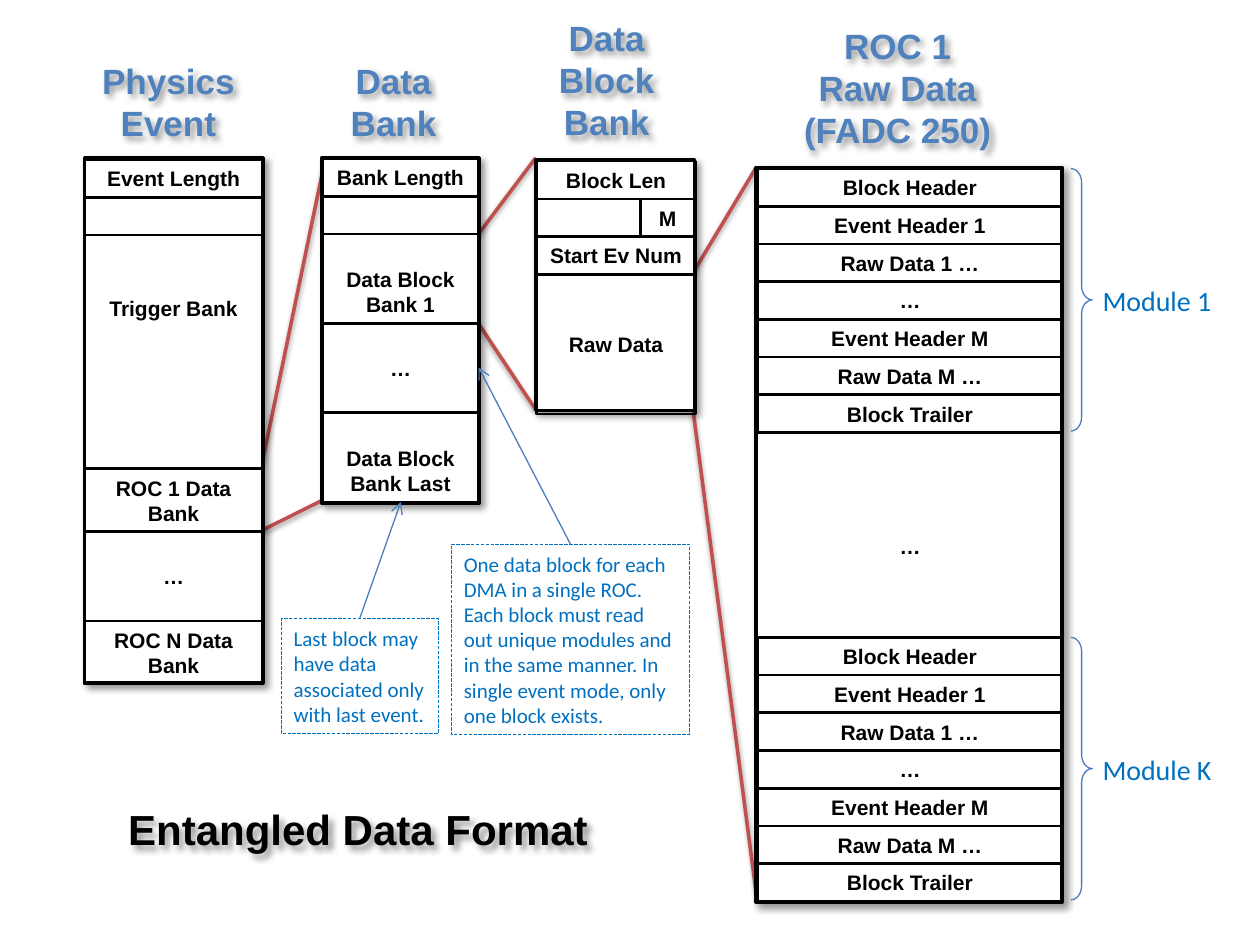
from lxml.etree import SubElement
from pptx import Presentation
from pptx.dml.color import RGBColor
from pptx.enum.dml import MSO_LINE
from pptx.enum.shapes import MSO_CONNECTOR, MSO_SHAPE
from pptx.enum.text import MSO_ANCHOR, PP_ALIGN
from pptx.oxml.ns import qn
from pptx.util import Cm, Pt

BLACK = RGBColor(0x00, 0x00, 0x00)
WHITE = RGBColor(0xFF, 0xFF, 0xFF)
HEADING_BLUE = RGBColor(0x4F, 0x81, 0xBD)
NOTE_BLUE = RGBColor(0x00, 0x70, 0xC0)
LINE_BLUE = RGBColor(0x4B, 0x7E, 0xBC)
RED = RGBColor(0xC0, 0x50, 0x4D)

# Shadows: opacity in percent, blur and distance in points, angle in degrees
BOX_SHADOW = (40, 4, 3, 45)
LINE_SHADOW = (38, 3.1, 1.6, 90)

ROW = 0.76
TALL_ROW = 1.8
TWO_LINES = 1.27
MODULE_ROWS = ["Block Header", "Event Header 1", "Raw Data 1 …", "…",
               "Event Header M", "Raw Data M …", "Block Trailer"]


def fill_shadow(effects, opacity, blur, distance, angle):
    shadow = SubElement(effects, qn("a:outerShdw"), blurRad=str(Pt(blur)),
                        dist=str(Pt(distance)), dir=str(angle * 60000),
                        algn="tl", rotWithShape="0")
    color = SubElement(shadow, qn("a:srgbClr"), val=str(BLACK))
    SubElement(color, qn("a:alpha"), val=str(opacity * 1000))


class Diagram:
    """Holds the page and the styles of the data format diagram."""

    def __init__(self, page):
        self.page = page

    def add_text(self, box, lines, size=12, color=BLACK, font="Arial", bold=True,
                 align=PP_ALIGN.CENTER, anchor=MSO_ANCHOR.MIDDLE):
        frame = box.text_frame
        frame.word_wrap = True
        frame.vertical_anchor = anchor
        for number, line in enumerate(lines):
            para = frame.add_paragraph() if number else frame.paragraphs[0]
            para.alignment = align
            span = para.add_run()
            span.text = line
            span.font.name = font
            span.font.size = Pt(size)
            span.font.bold = bold
            span.font.color.rgb = color

    def cast_shadow(self, box):
        box.shadow.inherit = False
        effects = box._element.spPr.find(qn("a:effectLst"))
        fill_shadow(effects, *BOX_SHADOW)

    def title(self, text, left, top, width, height):
        box = self.page.shapes.title
        box.left, box.top = Cm(left), Cm(top)
        box.width, box.height = Cm(width), Cm(height)
        self.add_text(box, [text], size=24, align=PP_ALIGN.LEFT)
        self.cast_shadow(box)

    def label(self, lines, left, top, width, height, **style):
        box = self.page.shapes.add_textbox(Cm(left), Cm(top), Cm(width), Cm(height))
        self.add_text(box, lines, **style)
        return box

    def heading(self, lines, left, top, width, height):
        box = self.label(lines, left, top, width, height, size=20, color=HEADING_BLUE)
        self.cast_shadow(box)

    def shape(self, kind, left, top, width, height, color, weight):
        """Add an unfilled outline without a shadow."""
        box = self.page.shapes.add_shape(kind, Cm(left), Cm(top), Cm(width), Cm(height))
        box.shadow.inherit = False
        box.fill.background()
        box.line.color.rgb = color
        box.line.width = Pt(weight)
        return box

    def frame(self, left, top, width, height):
        box = self.shape(MSO_SHAPE.RECTANGLE, left, top, width, height, BLACK, 2)
        box.fill.solid()
        box.fill.fore_color.rgb = WHITE
        self.cast_shadow(box)
        return box

    def cell(self, text, left, top, width, height):
        box = self.shape(MSO_SHAPE.RECTANGLE, left, top, width, height, BLACK, 1.5)
        if text:
            self.add_text(box, [text])
        return box

    def stack(self, rows, left, top, width):
        """Pile up (text, height) rows; a text of None leaves its space open."""
        cells = []
        for text, height in rows:
            if text is not None:
                cells.append(self.cell(text, left, top, width, height))
            top += height
        return cells

    def note(self, text, left, top, width, height):
        box = self.shape(MSO_SHAPE.RECTANGLE, left, top, width, height, NOTE_BLUE, 0.25)
        box.line.dash_style = MSO_LINE.LONG_DASH
        self.add_text(box, [text], color=NOTE_BLUE, font="Calibri", bold=False,
                      align=PP_ALIGN.LEFT)

    def brace(self, left, top, width, height):
        box = self.shape(MSO_SHAPE.RIGHT_BRACE, left, top, width, height, LINE_BLUE, 0.75)
        box.adjustments[0] = 0.65

    def line(self, start, end, color, weight, shadow=None, arrow=False):
        link = self.page.shapes.add_connector(
            MSO_CONNECTOR.STRAIGHT, *(Cm(length) for length in (*start, *end)))
        link.line.color.rgb = color
        link.line.width = Pt(weight)
        properties = link._element.spPr
        if arrow:
            SubElement(properties.find(qn("a:ln")), qn("a:tailEnd"), type="arrow")
        effects = SubElement(properties, qn("a:effectLst"))
        if shadow:
            fill_shadow(effects, *shadow)


def main():
    deck = Presentation()
    deck.slide_width, deck.slide_height = Cm(25.4), Cm(19.05)
    diagram = Diagram(deck.slides.add_slide(deck.slide_layouts[5]))
    diagram.title("Entangled Data Format", 2.33, 16.08, 10.16, 1.27)

    expansions = [((13.97, 8.26), (15.24, 17.98)), ((13.97, 5.5), (15.24, 3.38)),
                  ((9.53, 6.35), (10.8, 8.26)), ((9.53, 4.87), (10.8, 3.18)),
                  ((4.66, 11), (6.77, 9.95)), ((5.29, 9.31), (6.56, 3.18))]
    for start, end in expansions:
        diagram.line(start, end, RED, 2, shadow=LINE_SHADOW)

    diagram.heading(["Physics", "Event"], 1.7, 1.06, 3.39, 1.96)
    event = diagram.frame(1.7, 3.18, 3.6, 10.59)
    event.text_frame.margin_top = Cm(2.77)
    diagram.add_text(event, ["Trigger Bank"], anchor=MSO_ANCHOR.TOP)
    diagram.stack([("Event Length", ROW), ("", ROW), (None, 4.71),
                   ("ROC 1 Data Bank", TWO_LINES), ("…", TALL_ROW),
                   ("ROC N Data Bank", TWO_LINES)], 1.7, 3.22, 3.6)

    diagram.heading(["Data", "Bank"], 6.77, 1.06, 2.33, 1.96)
    diagram.frame(6.48, 3.18, 3.18, 6.96)
    bank = diagram.stack([("Bank Length", ROW), ("", ROW),
                          ("Data Block Bank 1", TALL_ROW), ("…", TALL_ROW),
                          ("Data Block Bank Last", TALL_ROW)], 6.5, 3.2, 3.15)
    for block in (bank[2], bank[4]):
        block.text_frame.vertical_anchor = MSO_ANCHOR.BOTTOM

    diagram.heading(["Data", "Block", "Bank"], 10.92, 0.2, 2.62, 2.82)
    diagram.frame(10.8, 3.23, 3.2, 5.05)
    block_rows = diagram.stack([("Block Len", ROW), ("M", ROW), ("Start Ev Num", ROW),
                                ("Raw Data", 2.82)], 10.82, 3.25, 3.2)
    count = block_rows[1].text_frame
    count.margin_left, count.margin_right = Cm(2.08), Cm(0)
    diagram.line((12.91, 4), (12.91, 4.77), BLACK, 1.5)

    diagram.heading(["ROC 1", "Raw Data", "(FADC 250)"], 15.77, 0.36, 4.65, 2.82)
    diagram.frame(15.24, 3.38, 6.17, 14.81)
    diagram.label(["…"], 15.27, 10.63, 6.15, ROW)
    for name, top in (("Module 1", 3.4), ("Module K", 12.85)):
        diagram.stack([(text, ROW) for text in MODULE_ROWS], 15.27, top, 6.15)
        diagram.brace(21.59, top, 0.43, 5.29)
        diagram.label([name], 21.8, top + 2.18, 3.05, 0.94, size=16,
                      color=NOTE_BLUE, font="Calibri", bold=False)

    diagram.note("One data block for each DMA in a single ROC. Each block must read "
                 "out unique modules and in the same manner. In single event mode, "
                 "only one block exists.", 9.1, 10.97, 4.8, 3.84)
    diagram.line((11.5, 10.97), (9.65, 7.41), LINE_BLUE, 0.75, arrow=True)
    diagram.note("Last block may have data associated only with last event.",
                 5.67, 12.47, 3.17, 2.32)
    diagram.line((7.25, 12.47), (8.08, 10.12), LINE_BLUE, 0.75, arrow=True)

    deck.save("out.pptx")


if __name__ == "__main__":
    main()
